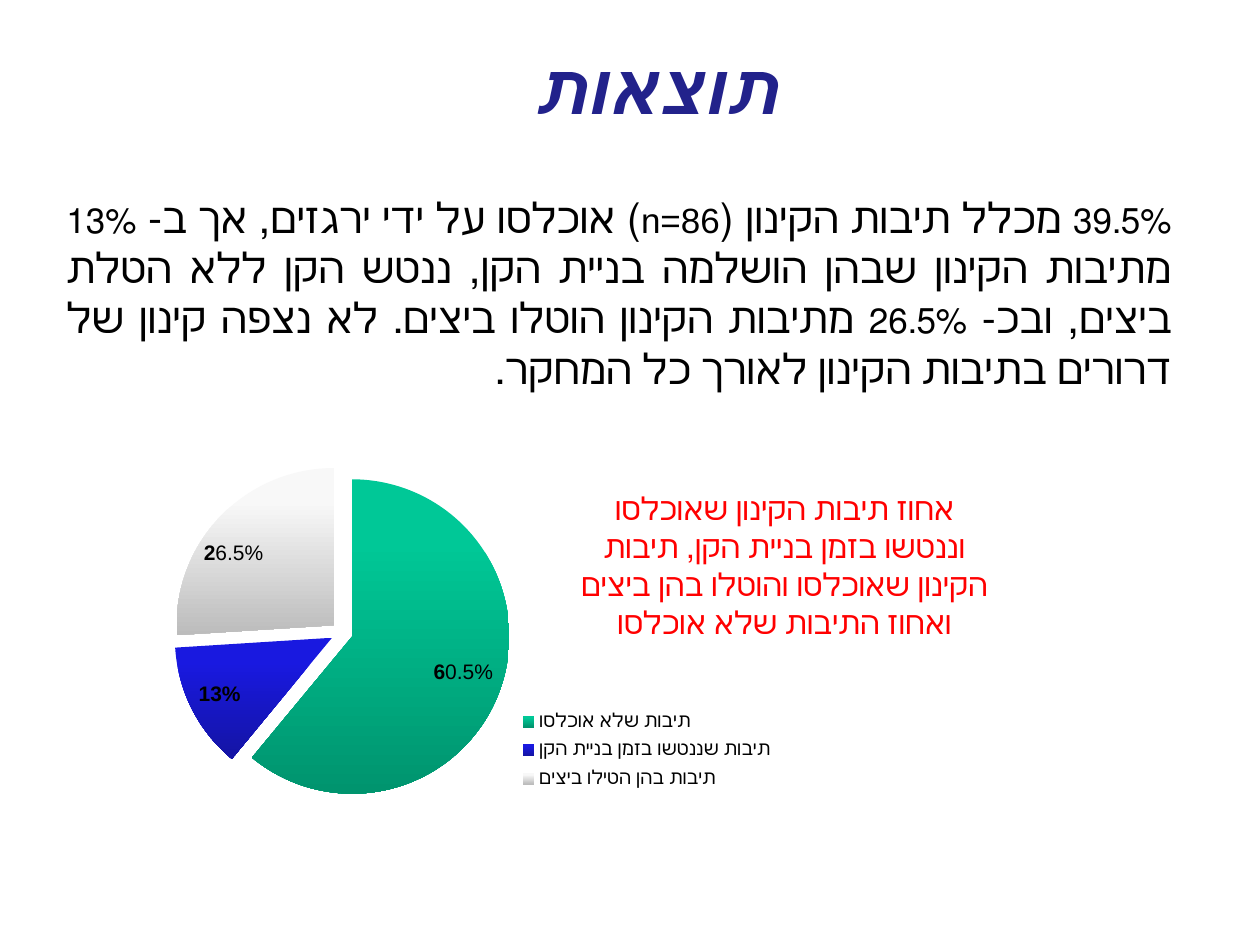
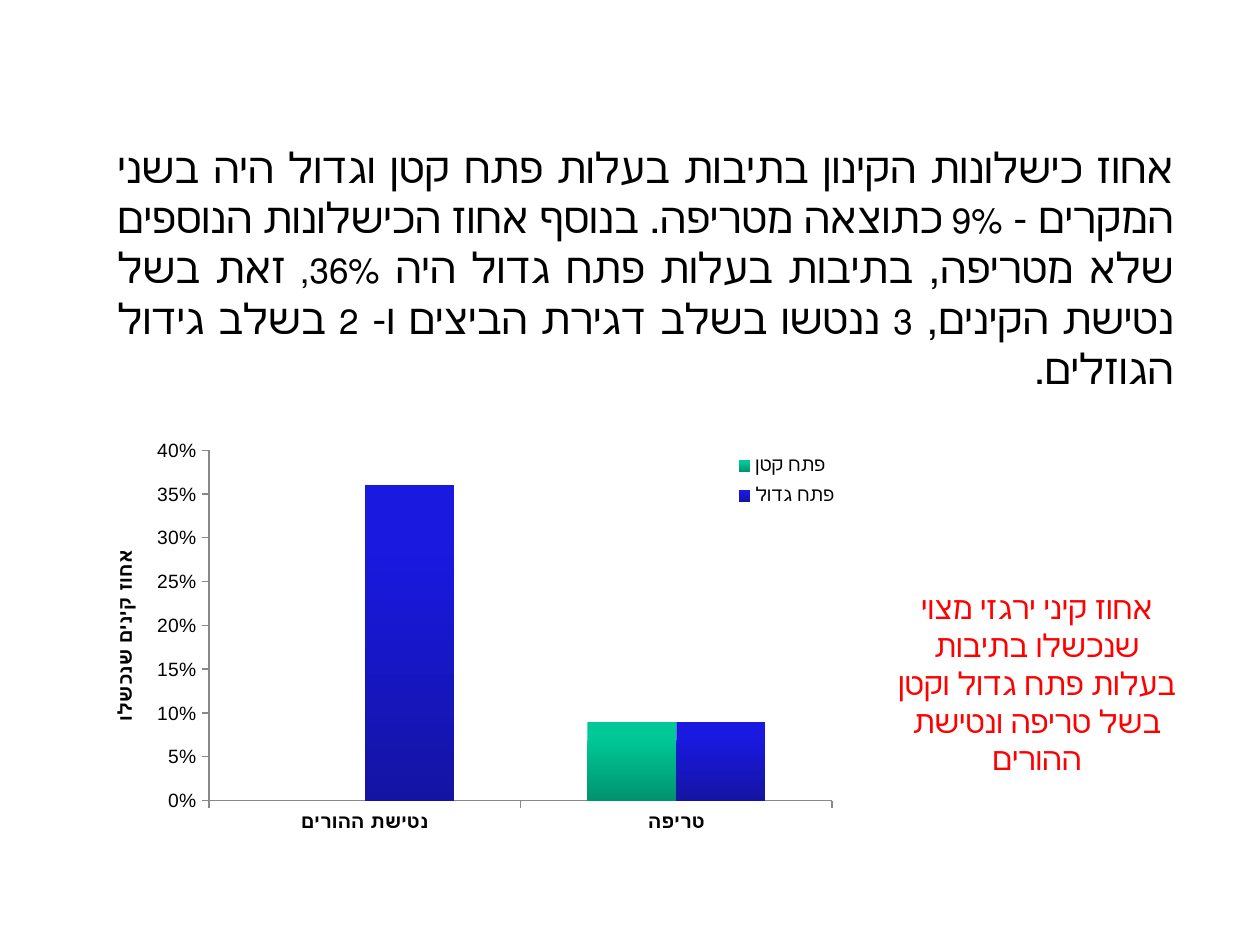
from lxml import etree
from pptx import Presentation
from pptx.chart.data import CategoryChartData
from pptx.dml.color import RGBColor
from pptx.enum.chart import (XL_CHART_TYPE, XL_LABEL_POSITION,
                             XL_LEGEND_POSITION, XL_TICK_MARK)
from pptx.enum.text import MSO_ANCHOR, PP_ALIGN
from pptx.oxml.ns import qn
from pptx.util import Emu, Pt

PIE, COLUMN = XL_CHART_TYPE.PIE, XL_CHART_TYPE.COLUMN_CLUSTERED
INSIDE_END = XL_LABEL_POSITION.INSIDE_END
LEGEND_RIGHT = XL_LEGEND_POSITION.RIGHT
TICK_NONE, TICK_OUT = XL_TICK_MARK.NONE, XL_TICK_MARK.OUTSIDE
CENTER, JUSTIFY = PP_ALIGN.CENTER, PP_ALIGN.JUSTIFY
MIDDLE, TOP = MSO_ANCHOR.MIDDLE, MSO_ANCHOR.TOP

FONT = "Arial"
NAVY = RGBColor(0x22, 0x22, 0x8B)
BLACK = RGBColor(0, 0, 0)
RED = RGBColor(0xFF, 0, 0)
GRAY = RGBColor(0x88, 0x88, 0x88)
# Top and bottom colour of each vertical gradient
GREEN = (RGBColor(0x00, 0xC8, 0x97), RGBColor(0x00, 0x94, 0x6E))
BLUE = (RGBColor(0x19, 0x19, 0xE0), RGBColor(0x14, 0x14, 0xA4))
SILVER = (RGBColor(0xF8, 0xF8, 0xF8), RGBColor(0xBC, 0xBC, 0xBC))

TITLE = dict(size=Pt(40), bold=True, italic=True)
BODY = dict(size=Pt(24))
NUMBER = dict(size=Pt(20))
CAPTION = dict(size=Pt(18))


def px(n):
    return Emu(round(n * 914400 / 126))


def style_font(font, **values):
    for name, value in dict(name=FONT, **values).items():
        setattr(font, name, value)


def add_text(s, box, runs, color, align, anchor=TOP):
    """Add one right-to-left paragraph made of (text, format) runs."""
    tf = s.shapes.add_textbox(*map(px, box)).text_frame
    tf.word_wrap = True
    tf.vertical_anchor = anchor
    p = tf.paragraphs[0]
    p.alignment = align
    p._p.get_or_add_pPr().set("rtl", "1")
    for text, values in runs:
        r = p.add_run()
        r.text = text
        style_font(r.font, **values)
        r.font.color.rgb = color


def set_layout(parent, index, box, inner=False, edge=True):
    """Place a chart part, from the chart's edge or as a shift, in fractions."""
    old = parent.find(qn("c:layout"))
    if old is not None:
        parent.remove(old)
    layout = etree.Element(qn("c:layout"))
    manual = etree.SubElement(layout, qn("c:manualLayout"))
    values = [("layoutTarget", "inner")] if inner else []
    if edge:
        values += [("xMode", "edge"), ("yMode", "edge")]
    values += zip("xywh", box)
    for tag, value in values:
        etree.SubElement(manual, qn("c:" + tag)).set("val", str(value))
    parent.insert(index, layout)


def fill_gradient(fmt, colors):
    fmt.fill.gradient()
    fmt.fill.gradient_angle = 270
    for stop, color, position in zip(fmt.fill.gradient_stops, colors, (0.2, 1)):
        stop.color.rgb = color
        stop.position = position
    fmt.line.fill.background()


def add_chart(s, kind, box, categories, series, plot_box, legend_box):
    data = CategoryChartData()
    data.categories = categories
    for name, values in series:
        data.add_series(name, values)
    chart = s.shapes.add_chart(kind, *map(px, box), data).chart
    style_font(chart.font, size=Pt(11))
    chart.font.color.rgb = BLACK
    chart.has_title = False
    chart.has_legend = True
    legend = chart.legend
    legend.position = LEGEND_RIGHT
    legend.include_in_layout = False
    style_font(legend.font, size=Pt(11))
    set_layout(legend._element, 1, legend_box)
    set_layout(chart._chartSpace.chart.plotArea, 0, plot_box, inner=True)
    return chart


def add_occupancy_pie(s, box):
    chart = add_chart(
        s, PIE, box,
        ["תיבות שלא אוכלסו", "תיבות שננטשו בזמן בניית הקן",
         "תיבות בהן הטילו ביצים"],
        [("Series 1", (61, 13, 26))],
        (0.05, 0.06, 0.5, 0.89), (0.55, 0.69, 0.38, 0.25))
    plot = chart.plots[0]
    plot.vary_by_categories = True
    boxes = plot.series[0]
    explosion = etree.Element(qn("c:explosion"))
    explosion.set("val", "7")
    boxes._element.find(qn("c:tx")).addnext(explosion)
    for i, colors in enumerate((GREEN, BLUE, SILVER)):
        fill_gradient(boxes.points[i].format, colors)

    labels = boxes.data_labels
    labels.show_value = False
    labels.show_percentage = True
    labels.number_format = "0%"
    labels.number_format_is_linked = False
    labels.position = INSIDE_END
    style_font(labels.font, size=Pt(12), bold=True)
    for i, parts, shift in ((0, ("6", "0.5%"), (0, -0.01)),
                            (2, ("2", "6.5%"), (-0.03, 0.05))):
        label = boxes.points[i].data_label
        p = label.text_frame.paragraphs[0]
        for text, bold in zip(parts, (True, False)):
            r = p.add_run()
            r.text = text
            style_font(r.font, size=Pt(12), bold=bold)
        label.position = INSIDE_END
        set_layout(p._p.getparent().getparent().getparent(), 1, shift,
                   edge=False)


def add_failure_columns(s, box):
    chart = add_chart(
        s, COLUMN, box, ["נטישת ההורים", "טריפה"],
        [("פתח קטן", (0, 0.09)), ("פתח גדול", (0.36, 0.09))],
        (0.15, 0.06, 0.82, 0.8), (0.83, 0.05, 0.16, 0.16))
    plot = chart.plots[0]
    plot.vary_by_categories = False
    plot.gap_width = 150
    plot.overlap = 0
    for series, colors in zip(plot.series, (GREEN, BLUE)):
        fill_gradient(series.format, colors)

    for axis, bold in ((chart.category_axis, True), (chart.value_axis, False)):
        axis.has_major_gridlines = False
        axis.major_tick_mark = TICK_OUT
        axis.minor_tick_mark = TICK_NONE
        axis.format.line.color.rgb = GRAY
        style_font(axis.tick_labels.font, size=Pt(11), bold=bold)
    axis = chart.value_axis
    axis.minimum_scale, axis.maximum_scale, axis.major_unit = 0, 0.4, 0.05
    axis.tick_labels.number_format = "0%"
    axis.tick_labels.number_format_is_linked = False
    tf = axis.axis_title.text_frame
    tf._txBody.bodyPr.set("rot", "-5400000")
    tf._txBody.bodyPr.set("vert", "horz")
    r = tf.paragraphs[0].add_run()
    r.text = "אחוז קינים שנכשלו"
    style_font(r.font, size=Pt(11), bold=True)
    set_layout(axis.axis_title._element, 1, (0.02, 0.28))


def build_results_slide(s):
    add_text(s, (144, 45, 1029, 84), [("תוצאות", TITLE)], NAVY, CENTER, MIDDLE)
    add_text(s, (54, 185, 1130, 217), [
        ("39.5%", NUMBER),
        (" מכלל תיבות הקינון (", BODY),
        ("n=86", NUMBER),
        (") אוכלסו על ידי ירגזים, אך ב- ", BODY),
        ("13% ", NUMBER),
        ("מתיבות הקינון שבהן הושלמה בניית הקן, ננטש הקן ללא הטלת ביצים, "
         "ובכ- ", BODY),
        ("26.5%", NUMBER),
        (" מתיבות הקינון הוטלו ביצים. לא נצפה קינון של דרורים בתיבות "
         "הקינון לאורך כל המחקר.", BODY),
    ], BLACK, JUSTIFY)
    add_occupancy_pie(s, (134, 442, 693, 378))
    add_text(s, (561, 483, 447, 165), [
        ("אחוז תיבות הקינון שאוכלסו וננטשו בזמן בניית הקן, תיבות הקינון "
         "שאוכלסו והוטלו בהן ביצים ואחוז התיבות שלא אוכלסו", CAPTION),
    ], RED, CENTER)


def build_failures_slide(s):
    add_text(s, (105, 135, 1081, 267), [
        ("אחוז כישלונות הקינון בתיבות בעלות פתח קטן וגדול היה בשני "
         "המקרים - ", BODY),
        ("9% ", NUMBER),
        ("כתוצאה מטריפה. בנוסף אחוז הכישלונות הנוספים שלא מטריפה, בתיבות "
         "בעלות פתח גדול היה ", BODY),
        ("36%, ", NUMBER),
        ("זאת בשל נטישת הקינים, ", BODY),
        ("3", NUMBER),
        (" ננטשו בשלב דגירת הביצים ו- ", BODY),
        ("2", NUMBER),
        (" בשלב גידול הגוזלים.", BODY),
    ], BLACK, JUSTIFY)
    add_text(s, (878, 582, 318, 165), [
        ("אחוז קיני ירגזי מצוי שנכשלו בתיבות בעלות פתח גדול וקטן בשל "
         "טריפה ונטישת ההורים", CAPTION),
    ], RED, CENTER)
    add_failure_columns(s, (95, 424, 760, 438))


def main():
    prs = Presentation()
    prs.slide_width, prs.slide_height = px(1260), px(945)
    for build in (build_results_slide, build_failures_slide):
        build(prs.slides.add_slide(prs.slide_layouts[6]))
    prs.save("out.pptx")


if __name__ == "__main__":
    main()
